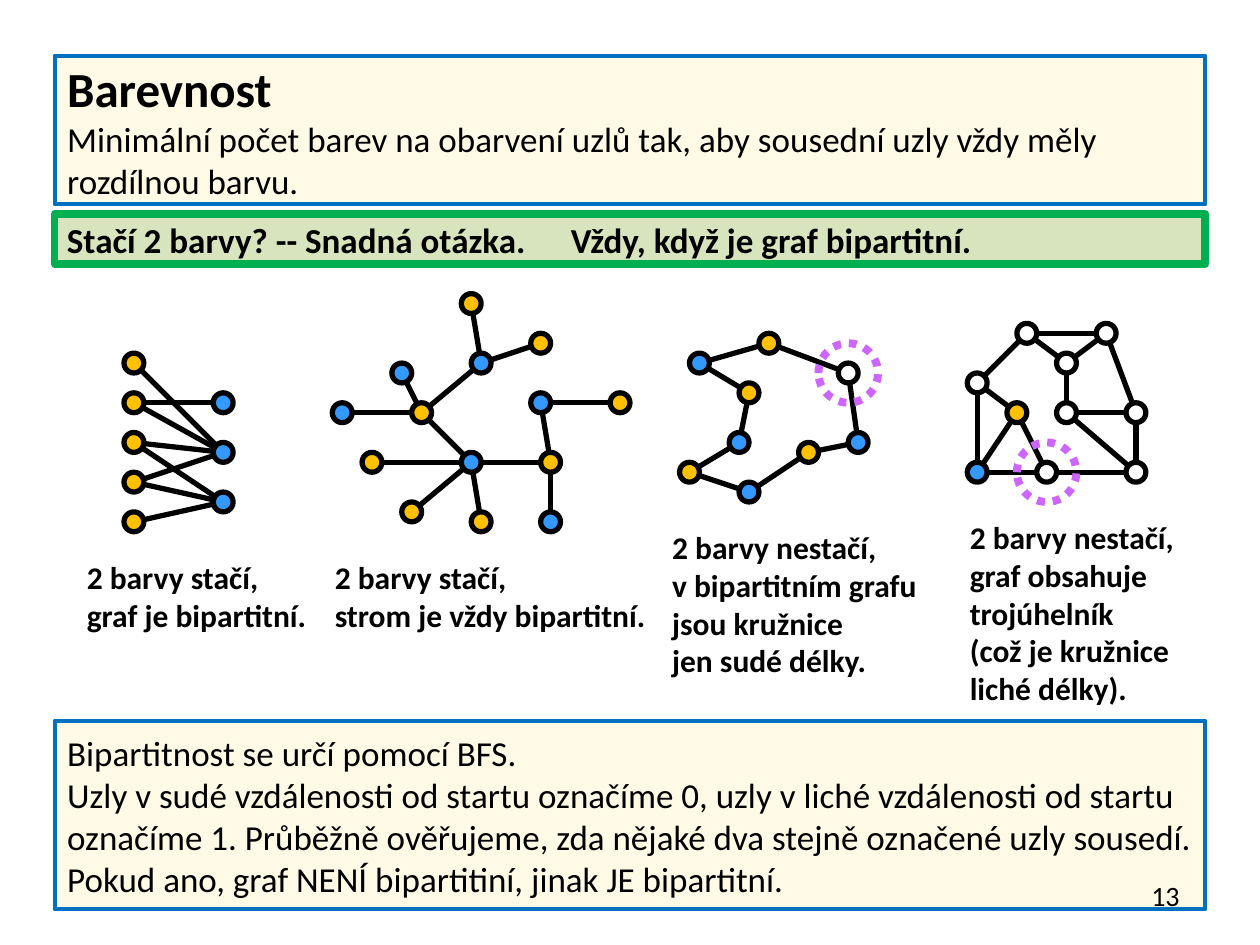
from dataclasses import dataclass

from lxml.etree import SubElement
from pptx import Presentation
from pptx.dml.color import RGBColor
from pptx.enum.dml import MSO_LINE
from pptx.enum.shapes import MSO_CONNECTOR, MSO_SHAPE
from pptx.enum.text import MSO_ANCHOR, MSO_AUTO_SIZE, PP_ALIGN
from pptx.oxml.ns import qn
from pptx.util import Cm, Pt


@dataclass(frozen=True)
class Theme:
    font: str = "Calibri"
    black: str = "000000"
    cream: str = "FFFAE5"
    blue: str = "0070C0"
    pale: str = "D7E4BD"
    green: str = "00B050"
    ring: str = "CC66FF"
    head: int = 28
    body: int = 20
    note: int = 18
    page: int = 16


THEME = Theme()
FILLS = {"o": "FFC000", "b": "3399FF", "w": "FFFFFF"}
LEFT, WIDTH = 1.1, 23.2
STEP, DOT, RING = 0.2, 0.4, 1.2


@dataclass(frozen=True)
class Graph:
    """Nodes are (column, row, fill key); each edge is a pair of node letters."""
    nodes: dict
    edges: str
    note: tuple
    spot: tuple
    mark: str = ""


GRAPHS = (
    Graph(
        {"a": (13, 36, "o"), "b": (13, 40, "o"), "c": (13, 44, "o"),
         "d": (13, 48, "o"), "e": (13, 52, "o"), "f": (22, 40, "b"),
         "g": (22, 45, "b"), "h": (22, 50, "b")},
        "ag bf bg cg ch dg dh eh",
        ("2 barvy stačí,", "graf je bipartitní."),
        (1.5, 11.12, 5.13)),
    Graph(
        {"a": (47, 30, "o"), "b": (48, 36, "b"), "c": (54, 34, "o"),
         "d": (40, 37, "b"), "e": (42, 41, "o"), "f": (34, 41, "b"),
         "g": (37, 46, "o"), "h": (47, 46, "b"), "i": (41, 51, "o"),
         "j": (48, 52, "o"), "k": (55, 46, "o"), "l": (54, 40, "b"),
         "m": (55, 52, "b"), "n": (62, 40, "o")},
        "ab bc be de ef eh gh hi hj hk kl km ln",
        ("2 barvy stačí,", "strom je vždy bipartitní."),
        (6.5, 11.12, 6.83)),
    Graph(
        {"a": (70, 36, "b"), "b": (77, 34, "o"), "c": (85, 37, "w"),
         "d": (86, 44, "b"), "e": (81, 45, "o"), "f": (75, 49, "b"),
         "g": (69, 47, "o"), "h": (74, 44, "b"), "i": (75, 39, "o")},
        "ab bc cd de ef fg gh hi ia",
        ("2 barvy nestačí,", "v bipartitním grafu", "jsou kružnice",
         "jen sudé délky."),
        (13.3, 10.52, 5.49), "c"),
    Graph(
        {"a": (103, 33, "w"), "b": (111, 33, "w"), "c": (107, 36, "w"),
         "d": (98, 38, "w"), "e": (102, 41, "o"), "f": (107, 41, "w"),
         "g": (114, 41, "w"), "h": (98, 47, "b"), "i": (105, 47, "w"),
         "j": (114, 47, "w")},
        "ab ac ad bc bg cf de dh eh ei fg fj gj hi ij",
        ("2 barvy nestačí,", "graf obsahuje", "trojúhelník",
         "(což je kružnice", "liché délky)."),
        (19.3, 10.32, 4.67), "i"),
)


def color(code):
    return RGBColor.from_string(code)


def paint(shape, fill, line, width):
    if fill:
        shape.fill.solid()
        shape.fill.fore_color.rgb = color(fill)
    else:
        shape.fill.background()
    shape.line.color.rgb = color(line)
    shape.line.width = Pt(width)


def place(shape, left, top, width, height):
    shape.left, shape.top = Cm(left), Cm(top)
    shape.width, shape.height = Cm(width), Cm(height)


def write(shape, lines, anchor=MSO_ANCHOR.MIDDLE, align=PP_ALIGN.LEFT, tab=None):
    """Fill a shape with lines given as (text, size, bold)."""
    frame = shape.text_frame
    frame.word_wrap = True
    frame.auto_size = MSO_AUTO_SIZE.NONE
    frame.vertical_anchor = anchor
    for num, (text, size, bold) in enumerate(lines):
        para = frame.add_paragraph() if num else frame.paragraphs[0]
        para.alignment = align
        para.space_before = Pt(0)
        props = para._p.get_or_add_pPr()
        props.set("marL", "0")
        props.set("indent", "0")
        SubElement(props, qn("a:buNone"))
        if tab:
            stops = SubElement(props, qn("a:tabLst"))
            SubElement(stops, qn("a:tab"), pos=str(Cm(tab)), algn="l")
        run = para.add_run()
        run.text = text
        run.font.name = THEME.font
        run.font.size = Pt(size)
        run.font.bold = bold
        run.font.color.rgb = color(THEME.black)


def add_edge(shapes, start, end):
    edge = shapes.add_connector(MSO_CONNECTOR.STRAIGHT, *map(Cm, start + end))
    edge.line.color.rgb = color(THEME.black)
    edge.line.width = Pt(3)
    SubElement(edge._element.spPr, qn("a:effectLst"))


def add_disc(shapes, mid, size, fill, line, width):
    x, y = (Cm(part - size / 2) for part in mid)
    disc = shapes.add_shape(MSO_SHAPE.OVAL, x, y, Cm(size), Cm(size))
    disc.shadow.inherit = False
    paint(disc, fill, line, width)
    return disc


def add_graph(slide, graph):
    shapes = slide.shapes.add_group_shape().shapes
    mids = {key: (0.1 + STEP * col, 0.12 + STEP * row)
            for key, (col, row, _) in graph.nodes.items()}
    for start, end in graph.edges.split():
        add_edge(shapes, mids[start], mids[end])
    for key, (_, _, fill) in graph.nodes.items():
        add_disc(shapes, mids[key], DOT, FILLS[fill], THEME.black, 3)
    if graph.mark:
        ring = add_disc(shapes, mids[graph.mark], RING, None, THEME.ring, 4.5)
        ring.line.dash_style = MSO_LINE.ROUND_DOT
    high = 0.25 + 0.78 * len(graph.note)
    box = shapes.add_textbox(*map(Cm, graph.spot + (high,)))
    write(box, [(text, THEME.note, True) for text in graph.note], MSO_ANCHOR.TOP)


def main():
    deck = Presentation()
    deck.slide_width, deck.slide_height = Cm(25.4), Cm(19.05)
    slide = deck.slides.add_slide(deck.slide_layouts[1])

    title, body = slide.placeholders
    place(title, LEFT, 1.12, WIDTH, 3)
    paint(title, THEME.cream, THEME.blue, 2.25)
    write(title, [
        ("Barevnost", THEME.head, True),
        ("Minimální počet barev na obarvení uzlů tak, aby sousední uzly vždy "
         "měly rozdílnou barvu.", THEME.body, False)])

    place(body, LEFT, 14.53, WIDTH, 3.8)
    paint(body, THEME.cream, THEME.blue, 2.25)
    write(body, [
        ("Bipartitnost se určí pomocí BFS.", THEME.body, False),
        ("Uzly v sudé vzdálenosti od startu označíme 0, uzly v liché "
         "vzdálenosti od startu označíme 1. Průběžně ověřujeme, zda nějaké "
         "dva stejně označené uzly sousedí. Pokud ano, graf NENÍ bipartitiní, "
         "jinak JE bipartitní.", THEME.body, False)])

    band = slide.shapes.add_shape(
        MSO_SHAPE.RECTANGLE, *map(Cm, (LEFT, 4.32, WIDTH, 1)))
    band.shadow.inherit = False
    paint(band, THEME.pale, THEME.green, 4.5)
    write(band, [("Stačí 2 barvy? -- Snadná otázka.\tVždy, když je graf "
                  "bipartitní.", THEME.body, True)], tab=9.74)

    for graph in GRAPHS:
        add_graph(slide, graph)

    page = slide.shapes.add_textbox(*map(Cm, (18.11, 17.53, 5.92, 1.02)))
    write(page, [("13", THEME.page, False)], align=PP_ALIGN.RIGHT)
    deck.save("out.pptx")


if __name__ == "__main__":
    main()
